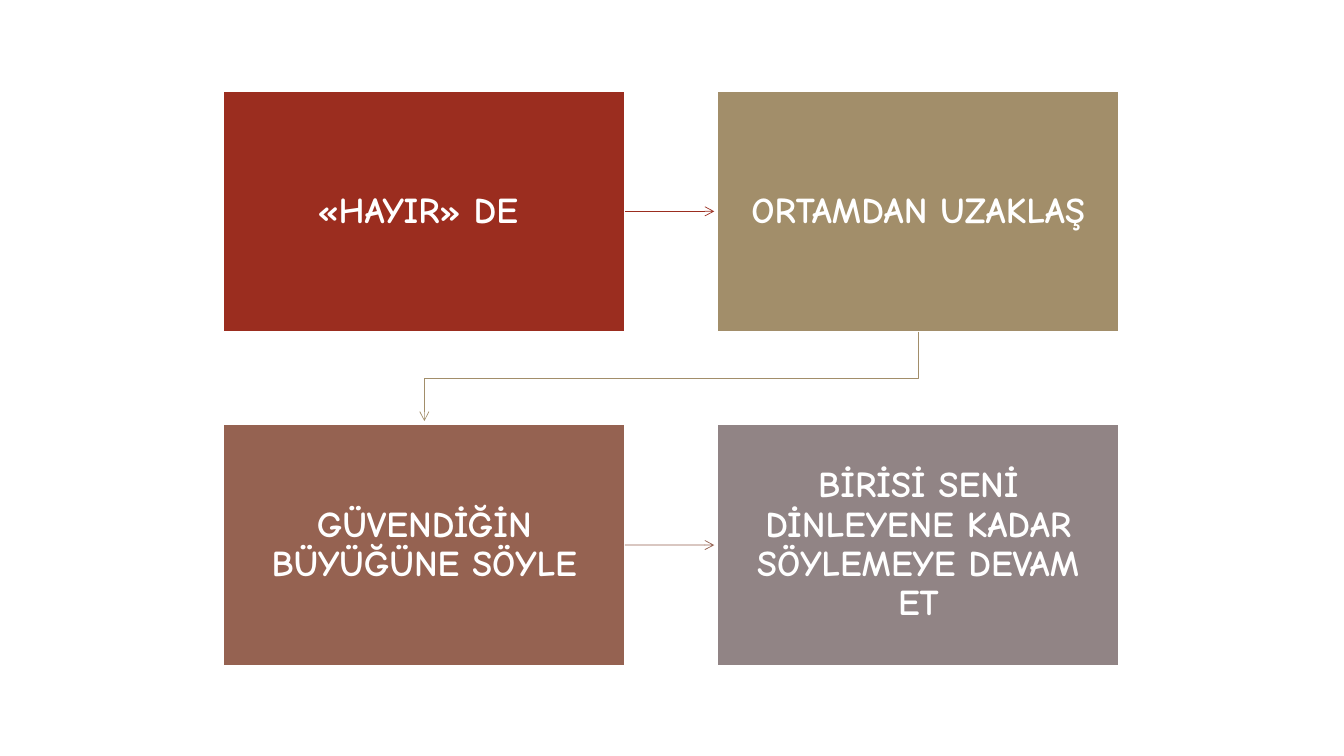
from dataclasses import dataclass, field
from typing import Any

from pptx import Presentation
from pptx import util as u
from pptx.dml.color import RGBColor
from pptx.enum import shapes, text
from pptx.oxml import ns, xmlchemy

# Layout in centimetres
LEFT, TOP = 5.64, 2.29
WIDE, HIGH = 10.11, 6.07
STEP_X, STEP_Y = 12.45, 8.41
GAP = 0.09

STEPS = [
    ("«HAYIR» DE ", "9B2D1F"),
    ("ORTAMDAN UZAKLAŞ", "A28E6A"),
    ("GÜVENDİĞİN BÜYÜĞÜNE SÖYLE", "956251"),
    ("BİRİSİ SENİ DİNLEYENE KADAR SÖYLEMEYE DEVAM ET", "918485"),
]


def color(code):
    return RGBColor.from_string(code)


def apply(item, values):
    for name, value in values.items():
        setattr(item, name, value)


@dataclass
class Board:
    slide: Any
    white: str = "FFFFFF"
    font: dict = field(default_factory=lambda: {
        "name": "Comic Neue", "size": u.Pt(26), "bold": True})
    frame: dict = field(default_factory=lambda: {
        "word_wrap": True, "vertical_anchor": text.MSO_ANCHOR.MIDDLE,
        "margin_left": u.Cm(0.5), "margin_right": u.Cm(0.5),
        "margin_top": u.Cm(0.5), "margin_bottom": u.Cm(0.5)})
    para: dict = field(default_factory=lambda: {
        "alignment": text.PP_ALIGN.CENTER, "line_spacing": 0.9})

    def box(self, x, y, words, fill):
        """Filled rectangle with centred text."""
        box = self.slide.shapes.add_shape(
            shapes.MSO_SHAPE.RECTANGLE, u.Cm(x), u.Cm(y), u.Cm(WIDE), u.Cm(HIGH))
        box.shadow.inherit = False
        box.fill.solid()
        box.fill.fore_color.rgb = color(fill)
        box.line.color.rgb = color(self.white)
        box.line.width = u.Pt(1)
        apply(box.text_frame, self.frame)
        para = box.text_frame.paragraphs[0]
        apply(para, self.para)
        run = para.add_run()
        run.text = words
        apply(run.font, self.font)
        run.font.color.rgb = color(self.white)
        return box

    def tip(self, item, tint):
        """Thin coloured line with an open arrowhead."""
        item.line.color.rgb = color(tint)
        item.line.width = u.Pt(0.5)
        tail = xmlchemy.OxmlElement("a:tailEnd")
        tail.set("type", "arrow")
        props = item.element.find(ns.qn("p:spPr"))
        props.find(ns.qn("a:ln")).append(tail)
        return props

    def arrow(self, start, x, y, tint):
        """Straight arrow from the right side of a box."""
        arrow = self.slide.shapes.add_connector(
            shapes.MSO_CONNECTOR.STRAIGHT, start.left + start.width, u.Cm(y),
            u.Cm(x), u.Cm(y))
        arrow.begin_connect(start, 3)
        props = self.tip(arrow, tint)
        props.append(xmlchemy.OxmlElement("a:effectLst"))

    def bend(self, points, tint):
        """Open path of straight parts, ending in an arrowhead."""
        first, *rest = [(u.Cm(x), u.Cm(y)) for x, y in points]
        build = self.slide.shapes.build_freeform(*first)
        build.add_line_segments(rest, close=False)
        bend = build.convert_to_shape()
        bend.shadow.inherit = False
        bend.fill.background()
        self.tip(bend, tint)


def main():
    deck = Presentation()
    deck.slide_width, deck.slide_height = u.Cm(33.87), u.Cm(19.05)
    board = Board(deck.slides.add_slide(deck.slide_layouts[6]))

    # Boxes in a two by two grid, with an arrow across each row
    for i, (words, fill) in enumerate(STEPS):
        row, col = divmod(i, 2)
        y = TOP + row * STEP_Y
        box = board.box(LEFT + col * STEP_X, y, words, fill)
        if col == 0:
            board.arrow(box, LEFT + STEP_X - GAP, y + HIGH / 2, fill)

    # Bent arrow from the second box down to the third
    mid = LEFT + WIDE / 2
    low, turn = TOP + HIGH, TOP + (HIGH + STEP_Y) / 2
    board.bend([(mid + STEP_X, low), (mid + STEP_X, turn), (mid, turn),
                (mid, TOP + STEP_Y - GAP)], STEPS[1][1])

    deck.save("out.pptx")


if __name__ == "__main__":
    main()
